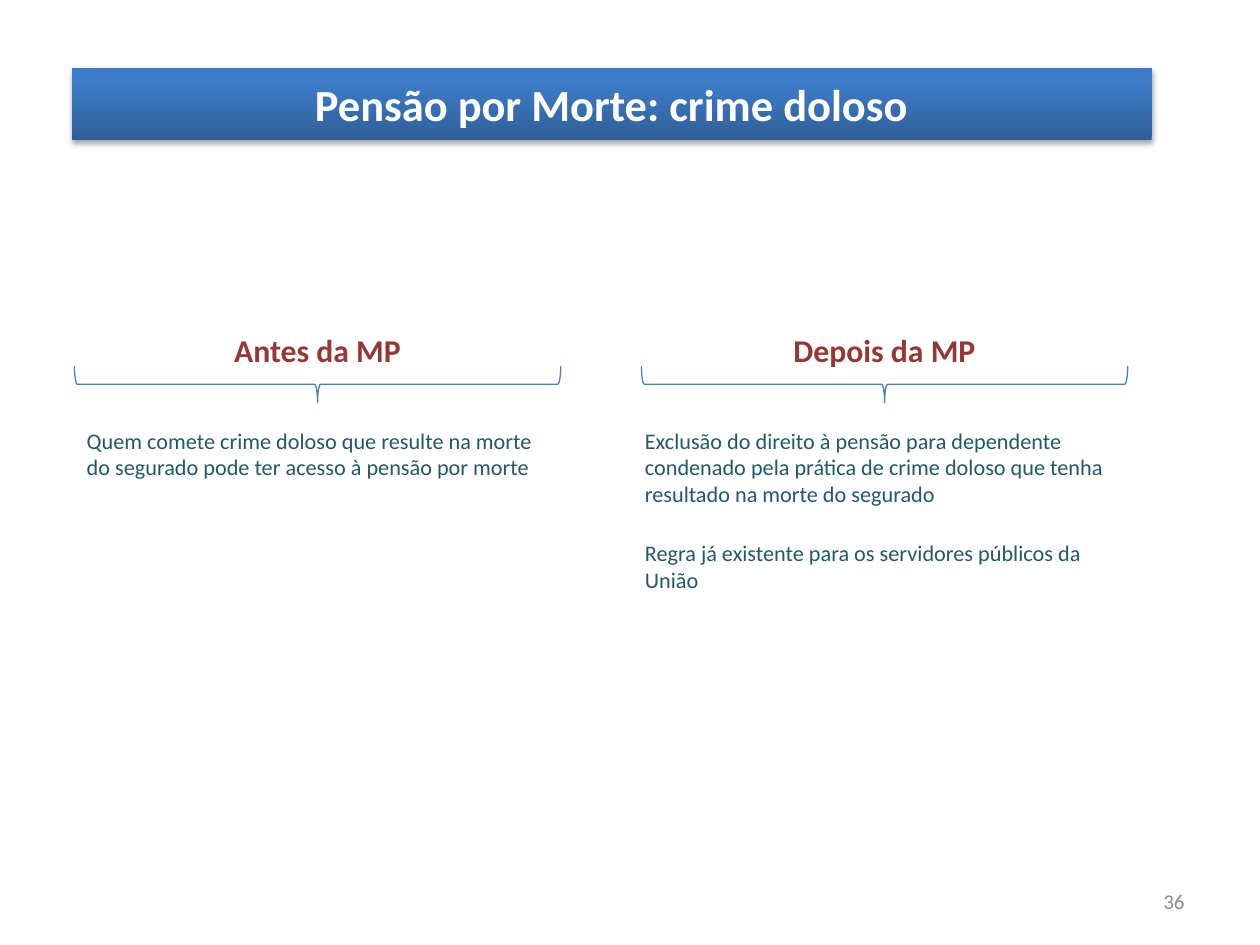
from dataclasses import dataclass

from pptx import Presentation
from pptx.dml.color import RGBColor as RGB
from pptx.enum.shapes import MSO_SHAPE as Preset
from pptx.enum.text import MSO_ANCHOR as Anchor, MSO_AUTO_SIZE as AutoSize, PP_ALIGN as Align
from pptx.oxml import parse_xml
from pptx.oxml.ns import nsdecls
from pptx.util import Inches, Pt

COLORS = {
    "title": "FFFFFF",
    "banner_dark": "2F5F99",
    "banner_middle": "3D7CC7",
    "banner_light": "3A7CCB",
    "shadow": "000000",
    "brace": "4B7EBC",
    "heading": "953735",
    "body": "215968",
    "number": "8C8C8C",
}
FONT = "Calibri"
COLUMN_WIDTH = 3.86
BRACE_DEPTH = 0.29
BRACE_MIDDLE = 3.05


@dataclass(frozen=True)
class Box:
    left: float
    top: float
    width: float
    height: float


@dataclass(frozen=True)
class Style:
    size: float
    color: str
    bold: bool = False
    align: Align = Align.LEFT
    space_before: float = 0


@dataclass(frozen=True)
class Column:
    left: float
    brace_left: float
    heading: str
    body: Box
    paragraphs: tuple[str, ...]


TITLE = Style(25.4, "title", True, Align.CENTER)
HEADING = Style(18.1, "heading", True, Align.CENTER)
BODY = Style(12.7, "body", space_before=18.5)
NUMBER = Style(12, "number", align=Align.RIGHT)

COLUMNS = (
    Column(0.59, 0.59, "Antes da MP", Box(0.59, 3.34, 3.93, 0.81), (
        "Quem comete crime doloso que resulte na morte do segurado pode ter acesso à pensão por morte",
    )),
    Column(5.09, 5.09, "Depois da MP", Box(5.02, 3.34, 4, 1.42), (
        "Exclusão do direito à pensão para dependente condenado pela prática de crime doloso "
        "que tenha resultado na morte do segurado",
        "Regra já existente para os servidores públicos da União",
    )),
)


def write_text(frame, paragraphs: tuple[str, ...], style: Style) -> None:
    for index, text in enumerate(paragraphs):
        paragraph = frame.add_paragraph() if index else frame.paragraphs[0]
        paragraph.text = text
        paragraph.alignment = style.align
        paragraph.space_before = Pt(style.space_before if index else 0)
        paragraph.font.name = FONT
        paragraph.font.size = Pt(style.size)
        paragraph.font.bold = style.bold
        paragraph.font.color.rgb = RGB.from_string(COLORS[style.color])


def add_text(slide, box: Box, paragraphs: tuple[str, ...], style: Style, anchor: Anchor = Anchor.TOP) -> None:
    shape = slide.shapes.add_textbox(*map(Inches, (box.left, box.top, box.width, box.height)))
    shape.text_frame.word_wrap = True
    shape.text_frame.vertical_anchor = anchor
    write_text(shape.text_frame, paragraphs, style)


def format_title(title, box: Box, text: str) -> None:
    title.left, title.top = Inches(box.left), Inches(box.top)
    title.width, title.height = Inches(box.width), Inches(box.height)
    frame = title.text_frame
    frame.auto_size = AutoSize.NONE
    frame.word_wrap = False
    frame.vertical_anchor = Anchor.MIDDLE
    frame.margin_left = frame.margin_right = frame.margin_top = frame.margin_bottom = 0
    write_text(frame, (text,), TITLE)

    positions = {"banner_dark": 0, "banner_middle": 80, "banner_light": 100}
    stops = "".join(
        f'<a:gs pos="{position * 1000}"><a:srgbClr val="{COLORS[name]}"/></a:gs>'
        for name, position in positions.items()
    )
    properties = title._element.spPr
    properties.append(parse_xml(
        f'<a:gradFill {nsdecls("a")} rotWithShape="1"><a:gsLst>{stops}</a:gsLst>'
        '<a:lin ang="16200000" scaled="0"/></a:gradFill>'
    ))
    properties.append(parse_xml(
        f'<a:effectLst {nsdecls("a")}>'
        f'<a:outerShdw blurRad="{Pt(3.1)}" dist="{Pt(1.8)}" dir="5400000" rotWithShape="0">'
        f'<a:srgbClr val="{COLORS["shadow"]}"><a:alpha val="35000"/></a:srgbClr>'
        '</a:outerShdw></a:effectLst>'
    ))


def add_brace(slide, left: float) -> None:
    brace = slide.shapes.add_shape(
        Preset.RIGHT_BRACE,
        Inches(left + (COLUMN_WIDTH - BRACE_DEPTH) / 2),
        Inches(BRACE_MIDDLE - COLUMN_WIDTH / 2),
        Inches(BRACE_DEPTH),
        Inches(COLUMN_WIDTH),
    )
    brace.rotation = 90
    brace.shadow.inherit = False
    brace.fill.background()
    brace.line.color.rgb = RGB.from_string(COLORS["brace"])
    brace.line.width = Pt(0.75)


def add_column(slide, column: Column) -> None:
    add_brace(slide, column.brace_left)
    add_text(slide, column.body, column.paragraphs, BODY)
    add_text(slide, Box(column.left, 2.58, COLUMN_WIDTH, 0.41), (column.heading,), HEADING)


def main() -> None:
    presentation = Presentation()
    presentation.slide_width, presentation.slide_height = Inches(10), Inches(7.5)
    slide = presentation.slides.add_slide(presentation.slide_layouts[5])
    format_title(slide.shapes.title, Box(0.57, 0.54, 8.57, 0.57), "Pensão por Morte: crime doloso")
    for column in COLUMNS:
        add_column(slide, column)
    add_text(slide, Box(7.17, 6.95, 2.33, 0.4), ("36",), NUMBER, Anchor.MIDDLE)
    presentation.save("out.pptx")


if __name__ == "__main__":
    main()
